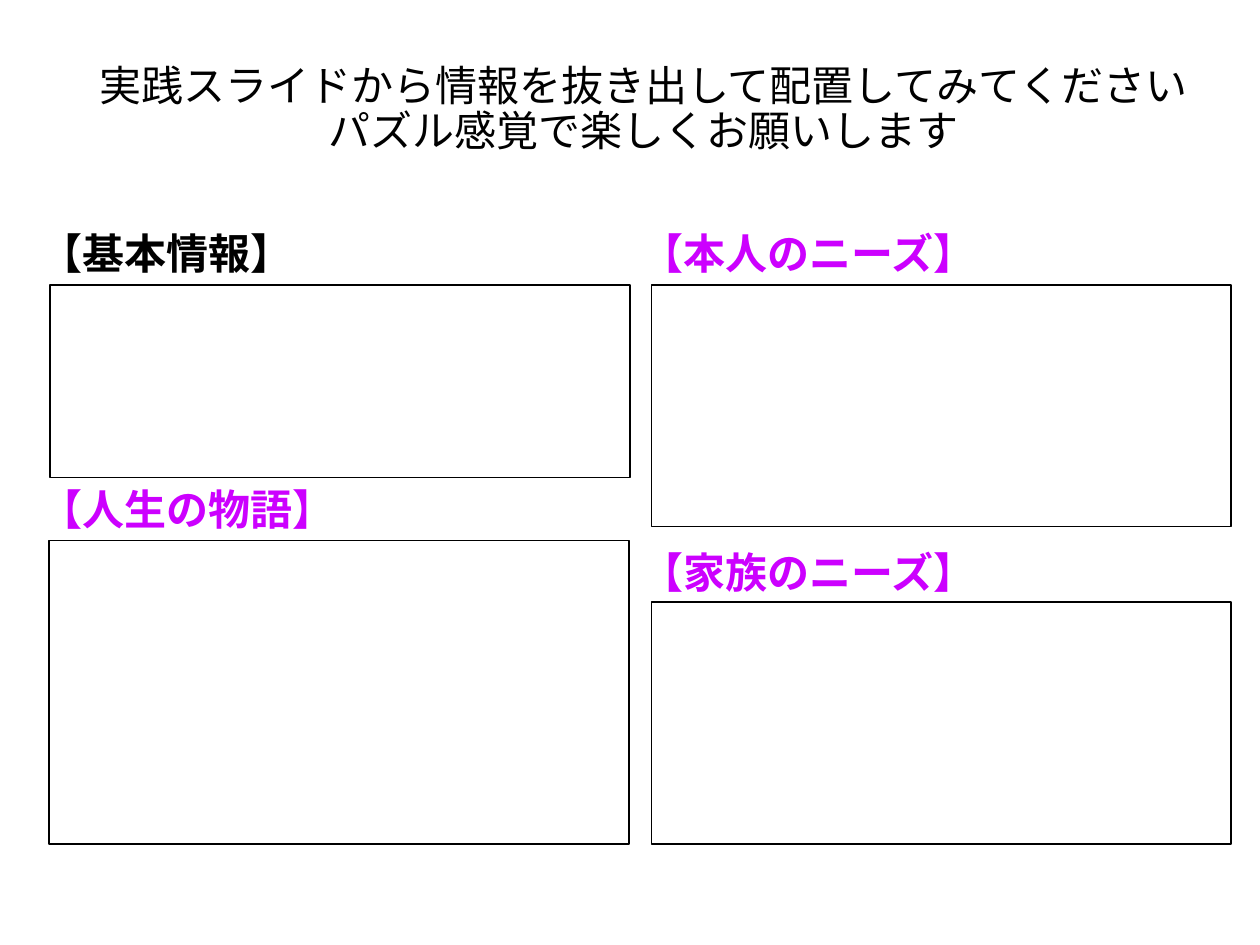
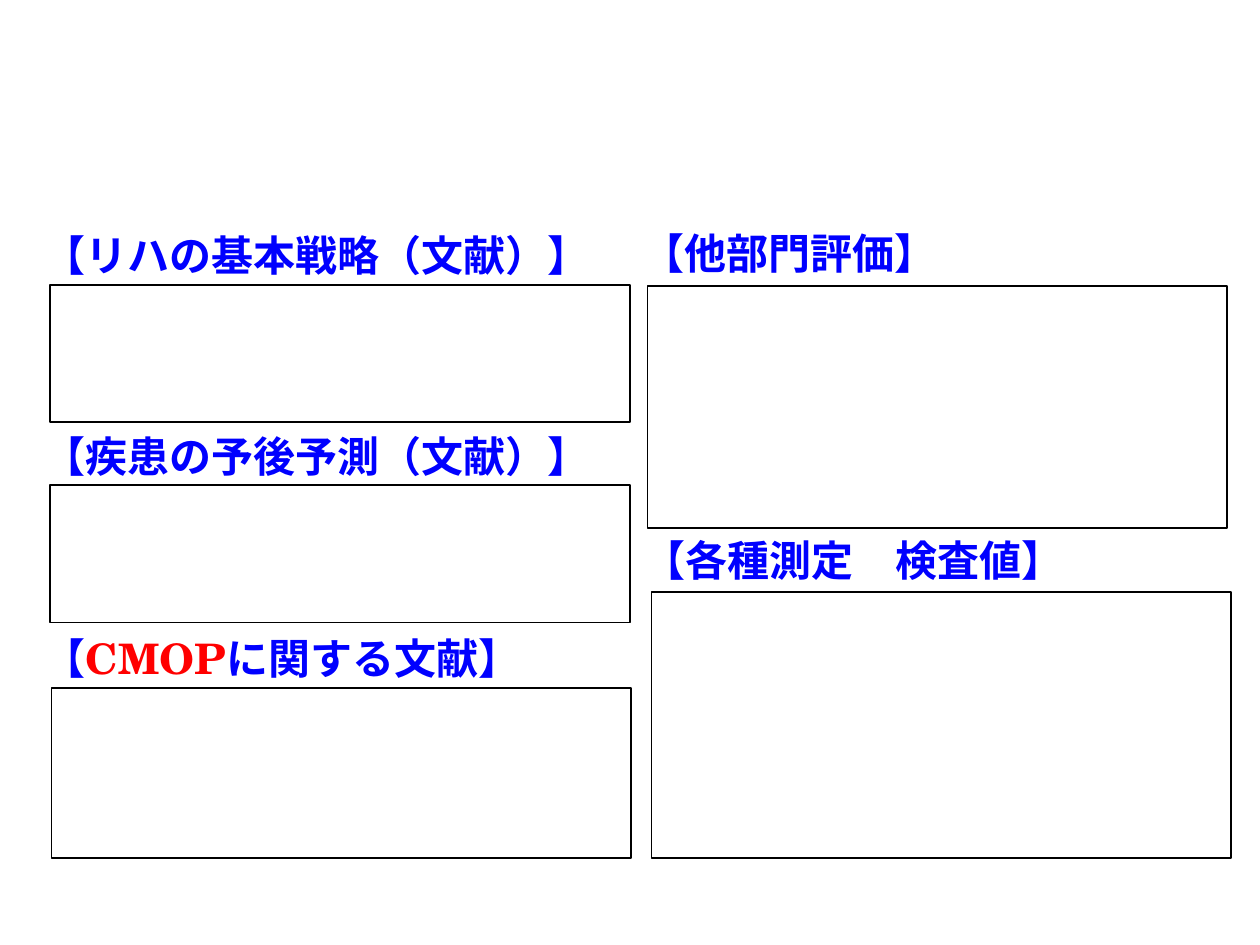
from lxml.etree import SubElement
from pptx import Presentation
from pptx.dml.color import RGBColor
from pptx.enum.lang import MSO_LANGUAGE_ID
from pptx.enum.shapes import MSO_SHAPE
from pptx.enum.text import MSO_ANCHOR, MSO_AUTO_SIZE, PP_ALIGN
from pptx.oxml.ns import qn
from pptx.util import Inches, Pt

BLACK = RGBColor(0, 0, 0)
WHITE = RGBColor(255, 255, 255)
PURPLE = RGBColor(0xCC, 0, 0xFF)
BLUE = RGBColor(0, 0, 255)
RED = RGBColor(255, 0, 0)
SANS = "Noto Sans CJK JP"
SERIF = "TeX Gyre Schola"
SIZE = Pt(24)
GAP = Pt(86.5)
WIDTH = 4.6


def add_run(para, text, color, face=SERIF, bold=True):
    """Add one formatted run to a paragraph."""
    run = para.add_run()
    run.text = text
    font = run.font
    font.size, font.bold, font.name = SIZE, bold, face
    font.color.rgb = color
    font.language_id = MSO_LANGUAGE_ID.JAPANESE
    SubElement(run._r.get_or_add_rPr(), qn("a:ea"), typeface=SANS)


def add_title(slide, lines):
    """Fill the title placeholder with centred lines."""
    title = slide.shapes.title
    title.left, title.top = Inches(0.45), Inches(0.15)
    title.width, title.height = Inches(9.31), Inches(1.45)
    frame = title.text_frame
    frame.auto_size = MSO_AUTO_SIZE.NONE
    frame.vertical_anchor = MSO_ANCHOR.MIDDLE
    para = frame.paragraphs[0]
    para.alignment = PP_ALIGN.CENTER
    para.line_spacing = 0.9
    for num, line in enumerate(lines):
        if num:
            para.add_line_break()
        add_run(para, line, BLACK, SANS, False)


def add_heads(slide, left, top, width, height, *heads):
    """Add a text box of headings, each a list of text and colour runs."""
    box = slide.shapes.add_textbox(
        Inches(left), Inches(top), Inches(width), Inches(height))
    frame = box.text_frame
    frame.word_wrap = True
    for num, runs in enumerate(heads):
        para = frame.add_paragraph() if num else frame.paragraphs[0]
        para.alignment = PP_ALIGN.LEFT
        if num:
            para.space_before = GAP
        for text, color in runs:
            add_run(para, text, color)


def add_frame(slide, left, top, height):
    """Add an empty outlined answer frame."""
    shape = slide.shapes.add_shape(
        MSO_SHAPE.RECTANGLE, Inches(left), Inches(top),
        Inches(WIDTH), Inches(height))
    shape.shadow.inherit = False
    shape.fill.solid()
    shape.fill.fore_color.rgb = WHITE
    shape.line.color.rgb = BLACK
    shape.line.width = Pt(1)


def add_needs(deck):
    """Build the slide on the person, the story and the needs."""
    slide = deck.slides.add_slide(deck.slide_layouts[5])
    for left, top, width, text, color in (
            (0.22, 1.76, 2.27, "【基本情報】", BLACK),
            (0.22, 3.79, 2.64, "【人生の物語】", PURPLE),
            (4.99, 1.76, 3.09, "【本人のニーズ】", PURPLE),
            (4.99, 4.29, 3.09, "【家族のニーズ】", PURPLE)):
        add_heads(slide, left, top, width, 0.5, [(text, color)])
    add_title(slide, ("実践スライドから情報を抜き出して配置してみてください",
                      "パズル感覚で楽しくお願いします"))
    for place in ((0.4, 2.26, 1.53), (0.39, 4.29, 2.41),
                  (5.17, 2.26, 1.92), (5.17, 4.78, 1.92)):
        add_frame(slide, *place)


def add_tests(deck):
    """Build the slide on literature, other units and test values."""
    slide = deck.slides.add_slide(deck.slide_layouts[6])
    add_heads(slide, 0.25, 1.77, 4.74, 3.74,
              [("【リハの基本戦略（文献）】", BLUE)],
              [("【疾患の予後予測（文献）】", BLUE)],
              [("【", BLUE), ("CMOP", RED), ("に関する文献】", BLUE)])
    add_heads(slide, 5, 1.76, 2.62, 0.5, [("【他部門評価】", BLUE)])
    add_heads(slide, 5.01, 4.19, 3.72, 0.5, [("【各種測定　検査値】", BLUE)])
    for place in ((0.4, 2.26, 1.09), (0.4, 3.85, 1.09), (0.41, 5.46, 1.35),
                  (5.14, 2.27, 1.92), (5.17, 4.7, 2.11)):
        add_frame(slide, *place)


def main():
    """Build and save the deck."""
    deck = Presentation()
    deck.slide_width, deck.slide_height = Inches(10), Inches(7.5)
    add_needs(deck)
    add_tests(deck)
    deck.save("out.pptx")


if __name__ == "__main__":
    main()
